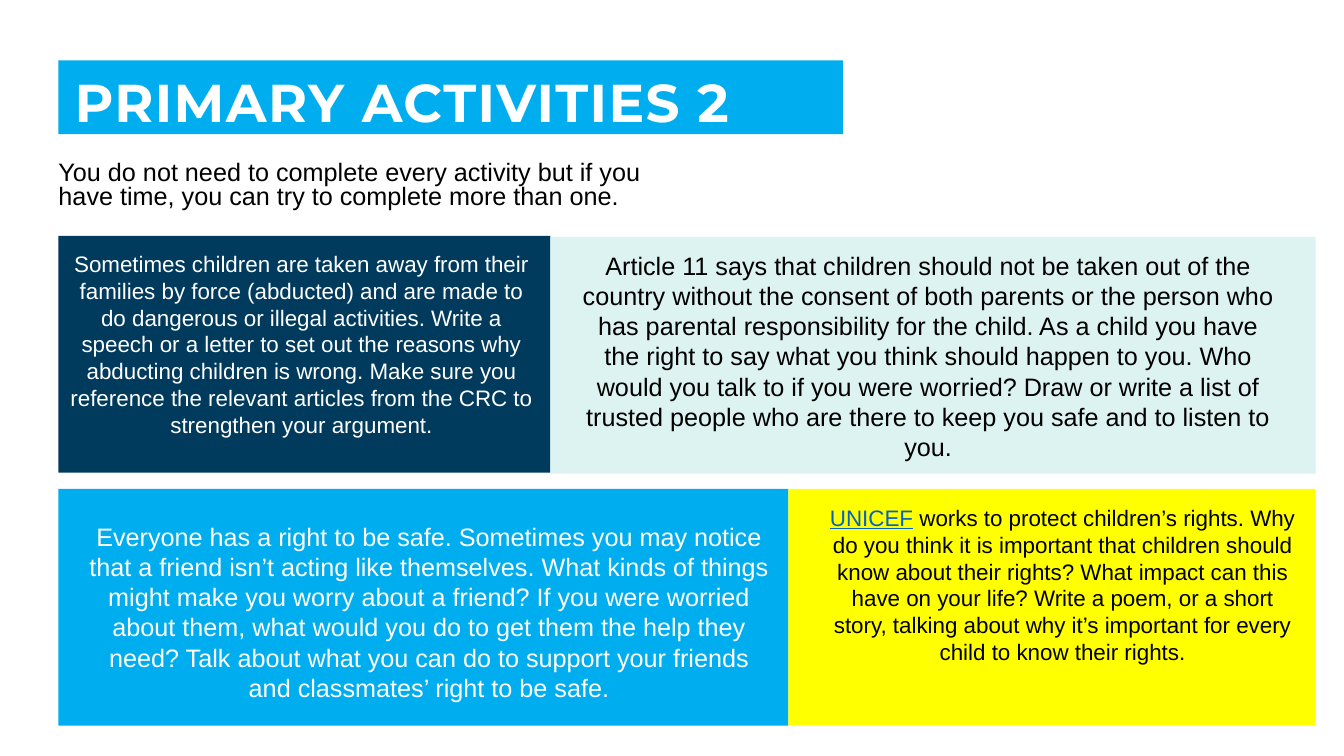
from lxml import etree
from pptx import Presentation
from pptx.dml.color import RGBColor
from pptx.enum.shapes import MSO_SHAPE
from pptx.enum.text import MSO_ANCHOR, MSO_AUTO_SIZE, PP_ALIGN
from pptx.oxml.ns import qn
from pptx.util import Inches, Pt

RECTANGLE = MSO_SHAPE.RECTANGLE
MIDDLE, TOP = MSO_ANCHOR.MIDDLE, MSO_ANCHOR.TOP
NO_AUTOFIT = MSO_AUTO_SIZE.NONE
LEFT, CENTER = PP_ALIGN.LEFT, PP_ALIGN.CENTER

WHITE, BLACK = "FFFFFF", "000000"
CYAN, NAVY, MINT, YELLOW, LINK_BLUE = "00AEEF", "003B5E", "DDF3F1", "FFFF00", "0563C1"
MARGIN = 0.58
CARD_HEIGHT = 2.35


def set_color(color_format, hex_color):
    color_format.rgb = RGBColor.from_string(hex_color)


def format_placeholder(shape, box, insets, anchor, line_spacing):
    """Move a placeholder, set up its text frame and return its first paragraph."""
    shape.left, shape.top, shape.width, shape.height = map(Inches, box)
    frame = shape.text_frame
    frame.word_wrap = True
    frame.auto_size = NO_AUTOFIT
    frame.vertical_anchor = anchor
    (frame.margin_left, frame.margin_top,
     frame.margin_right, frame.margin_bottom) = map(Inches, insets)
    paragraph = frame.paragraphs[0]
    paragraph.alignment = LEFT
    paragraph.line_spacing = line_spacing
    paragraph.space_before = Pt(0)
    return paragraph


presentation = Presentation()
presentation.slide_width = Inches(13.33)
presentation.slide_height = Inches(7.5)
slide = presentation.slides.add_slide(presentation.slide_layouts[1])

# Title banner
title = slide.shapes.title
title.fill.solid()
set_color(title.fill.fore_color, CYAN)
paragraph = format_placeholder(title, (MARGIN, 0.6, 7.78, 0.73), (0.16, 0.16, 0.12, 0), MIDDLE, 0.9)
run = paragraph.add_run()
run.text = "PRIMARY ACTIVITIES 2"
run.font.name = "Montserrat"
run.font.size = Pt(38)
run.font.bold = True
set_color(run.font.color, WHITE)
run.font._element.set("spc", "100")

# Introduction
introduction = slide.placeholders[1]
paragraph = format_placeholder(introduction, (MARGIN, 1.56, 6.21, 0.62), (0, 0.05, 0.1, 0.05), TOP, 0.8)
paragraph.text = ("You do not need to complete every activity but if you have time, "
                  "you can try to complete more than one.")
properties = paragraph._p.get_or_add_pPr()
properties.set("marL", "0")
properties.set("indent", "0")
etree.SubElement(properties, qn("a:buNone"))
paragraph.font.name = "Arial"
paragraph.font.size = Pt(18)
set_color(paragraph.font.color, BLACK)

# Activity cards: left, top, width, fill, text box, font size, text colour, linked word, text
cards = [
    (MARGIN, 2.34, 4.88, NAVY, (0.6, 2.43, 4.78, 1.99), 16, WHITE, "",
     "Sometimes children are taken away from their families by force (abducted) and are made "
     "to do dangerous or illegal activities. Write a speech or a letter to set out the reasons "
     "why abducting children is wrong. Make sure you reference the relevant articles from the "
     "CRC to strengthen your argument."),
    (5.46, 2.35, 7.59, MINT, (5.66, 2.43, 7.09, 2.22), 18, BLACK, "",
     "Article 11 says that children should not be taken out of the country without the consent "
     "of both parents or the person who has parental responsibility for the child. As a child "
     "you have the right to say what you think should happen to you. Who would you talk to if "
     "you were worried? Draw or write a list of trusted people who are there to keep you safe "
     "and to listen to you."),
    (MARGIN, 4.85, 7.24, CYAN, (0.78, 5.12, 6.95, 1.92), 18, WHITE, "",
     "Everyone has a right to be safe. Sometimes you may notice that a friend isn’t acting like "
     "themselves. What kinds of things might make you worry about a friend? If you were worried "
     "about them, what would you do to get them the help they need? Talk about what you can do "
     "to support your friends and classmates’ right to be safe."),
    (7.82, 4.85, 5.23, YELLOW, (8.11, 4.95, 4.86, 1.72), 16, BLACK, "UNICEF",
     " works to protect children’s rights. Why do you think it is important that children should "
     "know about their rights? What impact can this have on your life? Write a poem, or a short "
     "story, talking about why it’s important for every child to know their rights."),
]
for left, top, width, fill, text_box, size, text_color, linked_word, text in cards:
    card = slide.shapes.add_shape(RECTANGLE, Inches(left), Inches(top), Inches(width), Inches(CARD_HEIGHT))
    card.shadow.inherit = False
    card.fill.solid()
    set_color(card.fill.fore_color, fill)
    card.line.fill.background()

    frame = slide.shapes.add_textbox(*map(Inches, text_box)).text_frame
    frame.word_wrap = True
    paragraph = frame.paragraphs[0]
    paragraph.alignment = CENTER
    paragraph.font.name = "Arial"
    paragraph.font.size = Pt(size)
    set_color(paragraph.font.color, text_color)
    if linked_word:
        run = paragraph.add_run()
        run.text = linked_word
        run.font.underline = True
        set_color(run.font.color, LINK_BLUE)
    paragraph.add_run().text = text

presentation.save("out.pptx")
